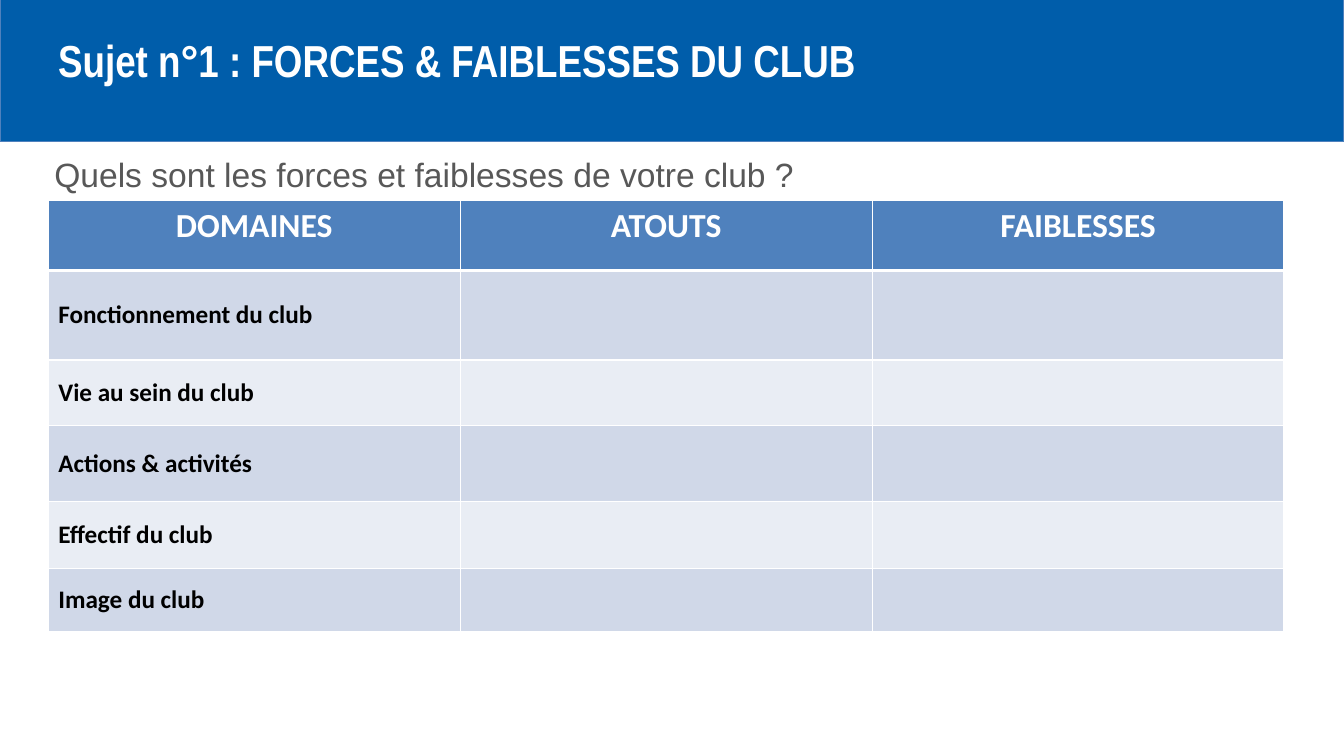
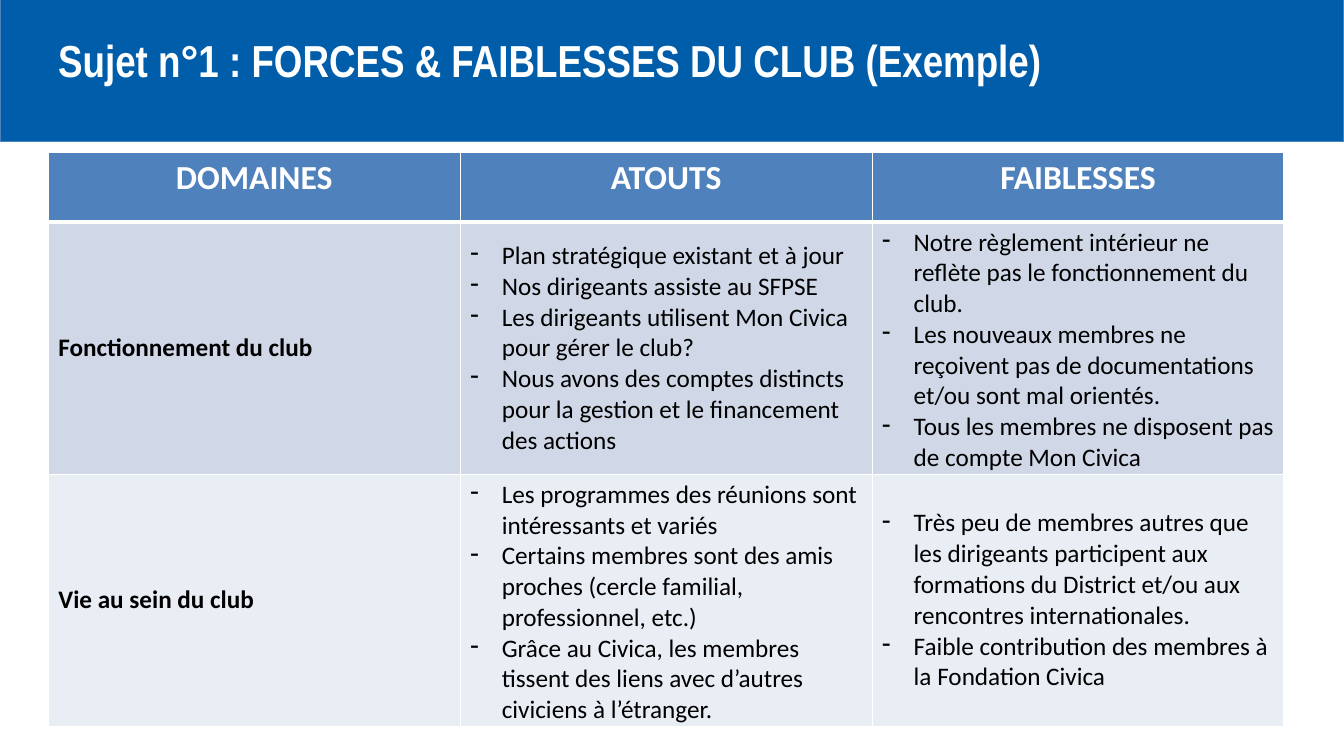
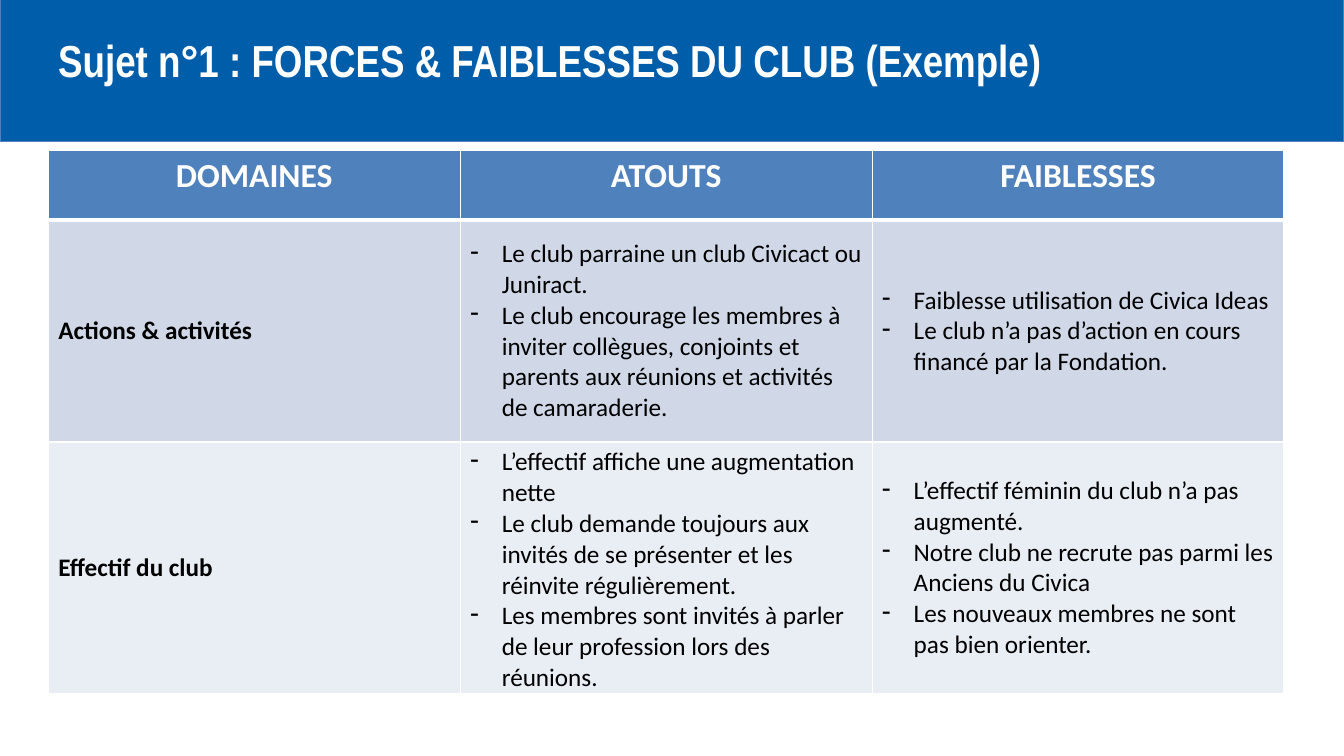
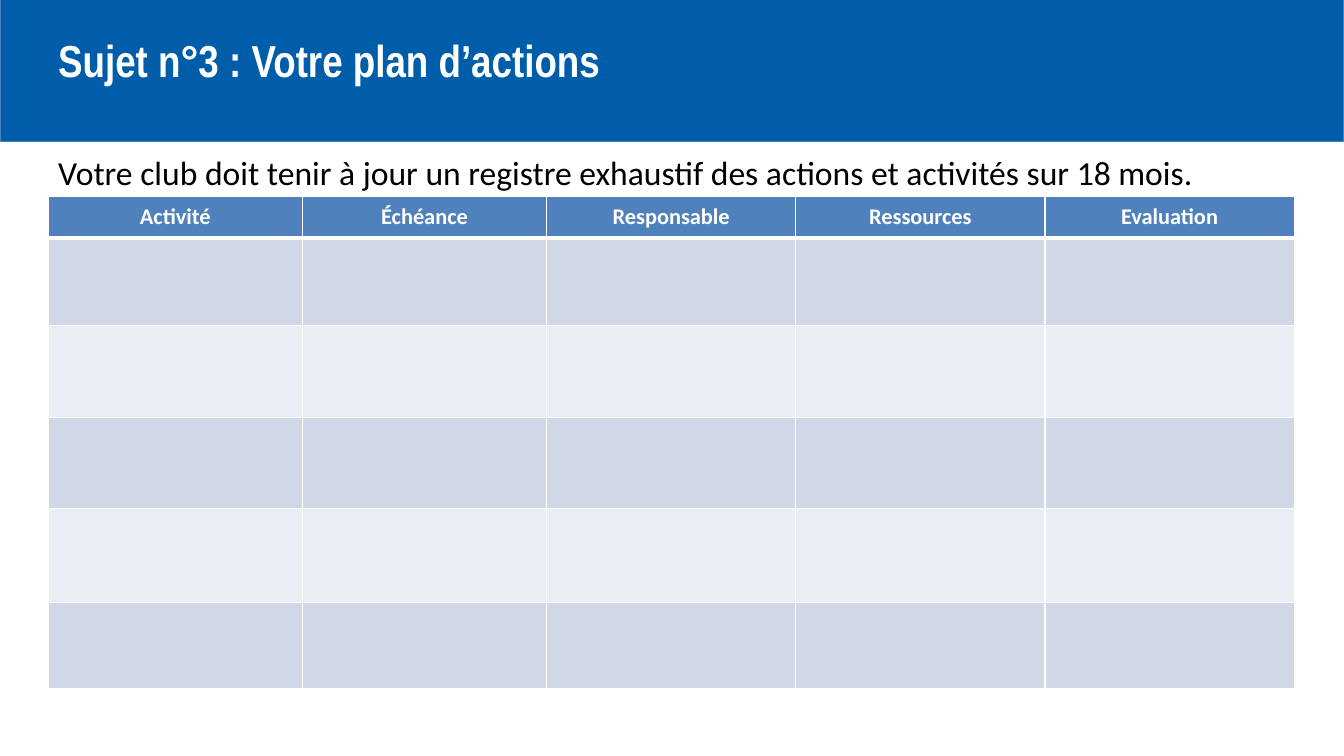
from lxml import etree
from pptx import Presentation
from pptx.dml.color import RGBColor
from pptx.enum.shapes import MSO_SHAPE
from pptx.enum.text import MSO_ANCHOR, PP_ALIGN
from pptx.oxml.ns import qn
from pptx.util import Pt

RECTANGLE = MSO_SHAPE.RECTANGLE
TOP, MIDDLE = MSO_ANCHOR.TOP, MSO_ANCHOR.MIDDLE
LEFT, CENTER = PP_ALIGN.LEFT, PP_ALIGN.CENTER

BAND_BLUE, HEADER_BLUE = "005DAA", "4F81BD"
ROW_FILLS = ["D0D8E8", "E9EDF4"]
WHITE, BLACK, GREY = "FFFFFF", "000000", "585858"
SLIDE_WIDTH, SLIDE_HEIGHT = 960, 540
MARGIN = 34.5
BULLET_INDENT = 22.5


def color(hex_value):
    return RGBColor.from_string(hex_value)


def add_text(paragraph, text, font, size, hex_value, bold=False):
    run = paragraph.add_run()
    run.text = text
    run.font.name = font
    run.font.size = Pt(size)
    run.font.bold = bold
    run.font.color.rgb = color(hex_value)


# Content: an item list in a cell becomes a dashed list
EXAMPLE_TITLE = "Sujet n°1 : FORCES & FAIBLESSES DU CLUB (Exemple)"
DOMAIN_HEADERS = ["DOMAINES", "ATOUTS", "FAIBLESSES"]
DOMAIN_COLUMNS = [294.25] * 3
DOMAIN_STYLE = {"headers": DOMAIN_HEADERS, "columns": DOMAIN_COLUMNS,
                "header_size": 24, "header_anchor": TOP}

slides = [
    {
        **DOMAIN_STYLE,
        "title": "Sujet n°1 : FORCES & FAIBLESSES DU CLUB",
        "question": ("Quels sont les forces et faiblesses de votre club ?",
                     "Arial", GREY, MIDDLE, (31.7, 106.5, 749.5, 36)),
        "top": 143.5,
        "heights": [49.7, 64, 47, 54, 48.2, 44.5],
        "rows": [
            ["Fonctionnement du club", [], []],
            ["Vie au sein du club", [], []],
            ["Actions & activités", [], []],
            ["Effectif du club", [], []],
            ["Image du club", [], []],
        ],
    },
    {
        **DOMAIN_STYLE,
        "title": EXAMPLE_TITLE,
        "top": 109,
        "heights": [49.7, 180, 180],
        "rows": [
            ["Fonctionnement du club",
             ["Plan stratégique existant et à jour",
              "Nos dirigeants assiste au SFPSE",
              "Les dirigeants utilisent Mon Civica pour gérer le club?",
              "Nous avons des comptes distincts pour la gestion et le financement des actions"],
             ["Notre règlement intérieur ne reflète pas le fonctionnement du club.",
              "Les nouveaux membres ne reçoivent pas de documentations et/ou sont mal orientés.",
              "Tous les membres ne disposent pas de compte Mon Civica"]],
            ["Vie au sein du club",
             ["Les programmes des réunions sont intéressants et variés",
              "Certains membres sont des amis proches (cercle familial, professionnel, etc.)",
              "Grâce au Civica, les membres tissent des liens avec d’autres civiciens à l’étranger."],
             ["Très peu de membres autres que les dirigeants participent aux formations "
              "du District et/ou aux rencontres internationales.",
              "Faible contribution des membres à la Fondation Civica"]],
        ],
    },
    {
        **DOMAIN_STYLE,
        "title": EXAMPLE_TITLE,
        "top": 107.7,
        "heights": [49.7, 158.3, 180],
        "rows": [
            ["Actions & activités",
             ["Le club parraine un club Civicact ou Juniract.",
              "Le club encourage les membres à inviter collègues, conjoints et parents "
              "aux réunions et activités de camaraderie."],
             ["Faiblesse utilisation de Civica Ideas",
              "Le club n’a pas d’action en cours financé par la Fondation."]],
            ["Effectif du club",
             ["L’effectif affiche une augmentation nette",
              "Le club demande toujours aux invités de se présenter et les réinvite régulièrement.",
              "Les membres sont invités à parler de leur profession lors des réunions."],
             ["L’effectif féminin du club n’a pas augmenté.",
              "Notre club ne recrute pas parmi les Anciens du Civica",
              "Les nouveaux membres ne sont pas bien orienter."]],
        ],
    },
    {
        "title": "Sujet n°3 : Votre plan d’actions",
        "question": ("Votre club doit tenir à jour un registre exhaustif des actions "
                     "et activités sur 18 mois.",
                     "Calibri", BLACK, TOP, (MARGIN, 105, 856, 65.5)),
        "headers": ["Activité", "Échéance", "Responsable", "Ressources", "Evaluation"],
        "header_size": 16,
        "header_anchor": MIDDLE,
        "columns": [181.5, 174.5, 178, 178, 178],
        "top": 140.5,
        "heights": [29.3, 62.6, 66, 65, 67, 61.5],
        "rows": [[[]] * 5] * 5,
    },
]

prs = Presentation()
prs.slide_width, prs.slide_height = Pt(SLIDE_WIDTH), Pt(SLIDE_HEIGHT)

for content in slides:
    slide = prs.slides.add_slide(prs.slide_layouts[6])

    # Title band
    band = slide.shapes.add_shape(RECTANGLE, 0, 0, Pt(SLIDE_WIDTH), Pt(101.3))
    band.shadow.inherit = False
    band.fill.solid()
    band.fill.fore_color.rgb = color(BAND_BLUE)
    band.line.color.rgb = color(HEADER_BLUE)
    band.line.width = Pt(0.75)

    title = slide.shapes.add_textbox(Pt(MARGIN), Pt(28.8), Pt(747), Pt(35.3)).text_frame
    title.word_wrap = True
    title.vertical_anchor = MIDDLE
    title.paragraphs[0].line_spacing = 0.8
    add_text(title.paragraphs[0], content["title"], "Arial Narrow", 32, WHITE, True)

    # Table
    columns, heights = content["columns"], content["heights"]
    table = slide.shapes.add_table(
        len(heights), len(columns), Pt(MARGIN), Pt(content["top"]),
        Pt(sum(columns)), Pt(sum(heights))).table
    for column, width in zip(table.columns, columns):
        column.width = Pt(width)
    for row, height in zip(table.rows, heights):
        row.height = Pt(height)

    for row_index, entries in enumerate([content["headers"]] + content["rows"]):
        is_header = row_index == 0
        for column_index, entry in enumerate(entries):
            cell = table.cell(row_index, column_index)
            cell.fill.solid()
            cell.fill.fore_color.rgb = color(
                HEADER_BLUE if is_header else ROW_FILLS[(row_index - 1) % 2])
            cell.vertical_anchor = content["header_anchor"] if is_header else MIDDLE

            # Cell borders, thicker under the header
            for position, side in enumerate(["lnL", "lnR", "lnT", "lnB"]):
                thick = (row_index, side) in [(0, "lnB"), (1, "lnT")]
                border = etree.Element(qn("a:" + side), w=str(Pt(3 if thick else 1)))
                border_fill = etree.SubElement(border, qn("a:solidFill"))
                etree.SubElement(border_fill, qn("a:srgbClr"), val=WHITE)
                cell._tc.get_or_add_tcPr().insert(position, border)

            # Cell text
            is_list = isinstance(entry, list)
            for item_index, item in enumerate(entry if is_list else [entry]):
                frame = cell.text_frame
                paragraph = frame.add_paragraph() if item_index else frame.paragraphs[0]
                if is_list:
                    properties = paragraph._p.get_or_add_pPr()
                    properties.set("marL", str(Pt(BULLET_INDENT)))
                    properties.set("indent", str(-Pt(BULLET_INDENT)))
                    etree.SubElement(properties, qn("a:buChar"), char="-")
                paragraph.alignment = CENTER if is_header else LEFT
                add_text(paragraph, item, "Calibri",
                         content["header_size"] if is_header else 18,
                         WHITE if is_header else BLACK, not is_list)

    # Line above the table
    if "question" in content:
        text, font, hex_value, anchor, place = content["question"]
        question = slide.shapes.add_textbox(*map(Pt, place)).text_frame
        question.word_wrap = True
        question.vertical_anchor = anchor
        add_text(question.paragraphs[0], text, font, 24, hex_value)

prs.save("out.pptx")
